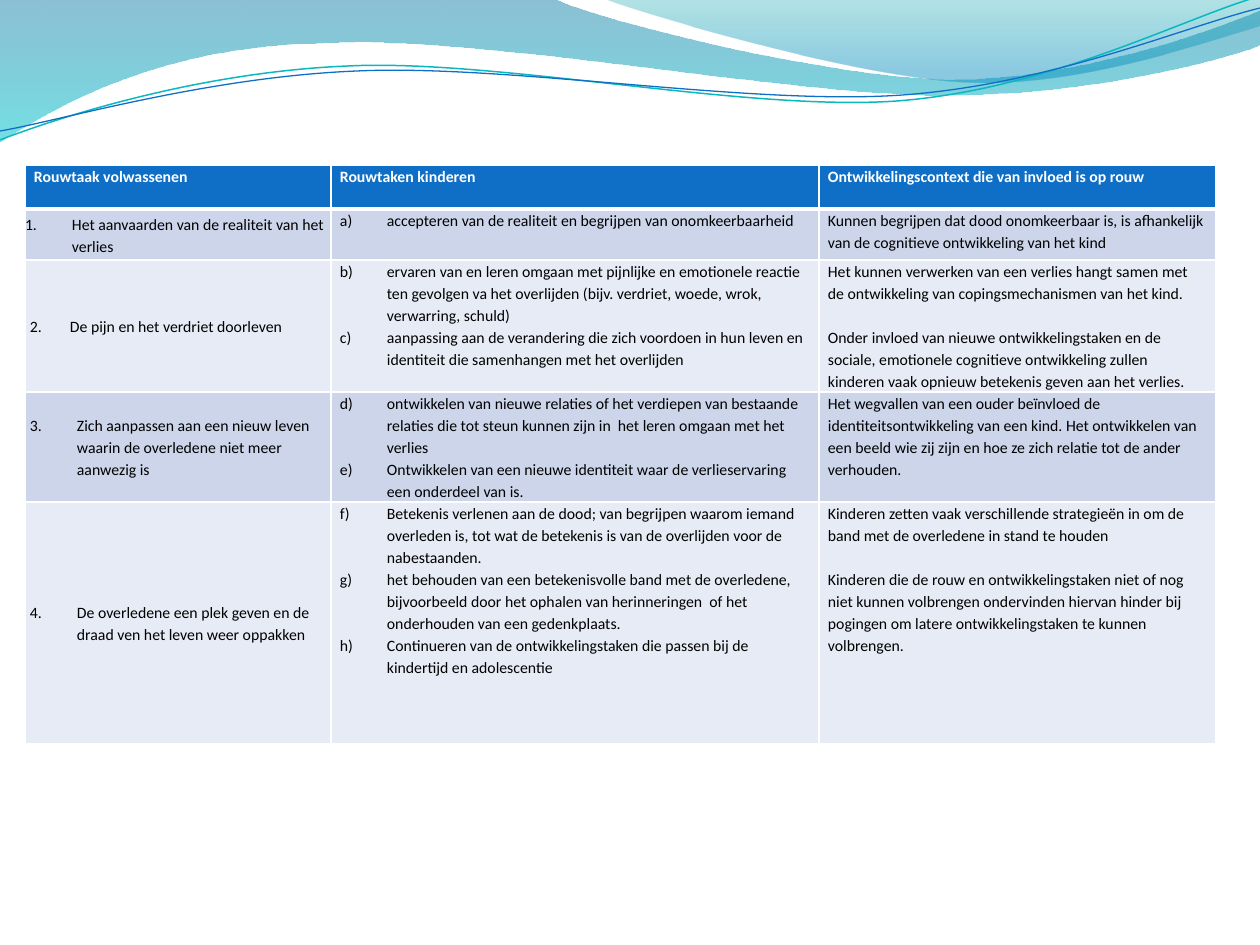
from dataclasses import dataclass
from math import cos, radians, sin

from lxml import etree
from pptx import Presentation
from pptx.dml.color import RGBColor
from pptx.enum.text import MSO_ANCHOR
from pptx.oxml.ns import qn
from pptx.util import Pt

SCALE = 914400 / 126
MIDDLE, TOP = MSO_ANCHOR.MIDDLE, MSO_ANCHOR.TOP


@dataclass(frozen=True)
class Theme:
    font: str = "Calibri"
    size: float = 9
    spacing: float = 1.15
    line_gap: float = 12.6
    white: str = "FFFFFF"
    black: str = "000000"
    blue: str = "0F6FC6"
    teal: str = "0AB8BF"
    bands: tuple = ("CCD5EA", "E7EBF5")
    wide_wave: tuple = ((0, "0074A1", 45), (1, "00C6CF", 55))
    right_wave: tuple = ((0, "00A1A9", 30), (0.8, "008BBF", 45))


T = Theme()

HEADERS = ["Rouwtaak volwassenen", "Rouwtaken kinderen",
           "Ontwikkelingscontext die van invloed is op rouw"]
TASKS = [
    ("Het aanvaarden van de realiteit van het verlies",
     ["accepteren van de realiteit en begrijpen van onomkeerbaarheid"],
     ["Kunnen begrijpen dat dood onomkeerbaar is, is afhankelijk van de cognitieve "
      "ontwikkeling van het kind"]),
    ("De pijn en het verdriet doorleven",
     ["ervaren van en leren omgaan met pijnlijke en emotionele reactie ten gevolgen va "
      "het overlijden (bijv. verdriet, woede, wrok, verwarring, schuld)",
      "aanpassing aan de verandering die zich voordoen in hun leven en identiteit die "
      "samenhangen met het overlijden"],
     ["Het kunnen verwerken van een verlies hangt samen met de ontwikkeling van "
      "copingsmechanismen van het kind.",
      "Onder invloed van nieuwe ontwikkelingstaken en de sociale, emotionele cognitieve "
      "ontwikkeling zullen kinderen vaak opnieuw betekenis geven aan het verlies."]),
    ("Zich aanpassen aan een nieuw leven waarin de overledene niet meer aanwezig is",
     ["ontwikkelen van nieuwe relaties of het verdiepen van bestaande relaties die tot "
      "steun kunnen zijn in  het leren omgaan met het verlies",
      "Ontwikkelen van een nieuwe identiteit waar de verlieservaring een onderdeel van is."],
     ["Het wegvallen van een ouder beïnvloed de identiteitsontwikkeling van een kind. Het "
      "ontwikkelen van een beeld wie zij zijn en hoe ze zich relatie tot de ander verhouden."]),
    ("De overledene een plek geven en de draad ven het leven weer oppakken",
     ["Betekenis verlenen aan de dood; van begrijpen waarom iemand overleden is, tot wat "
      "de betekenis is van de overlijden voor de nabestaanden.",
      "het behouden van een betekenisvolle band met de overledene, bijvoorbeeld door het "
      "ophalen van herinneringen  of het onderhouden van een gedenkplaats.",
      "Continueren van de ontwikkelingstaken die passen bij de kindertijd en adolescentie"],
     ["Kinderen zetten vaak verschillende strategieën in om de band met de overledene in "
      "stand te houden",
      "Kinderen die de rouw en ontwikkelingstaken niet of nog niet kunnen volbrengen "
      "ondervinden hiervan hinder bij pogingen om latere ontwikkelingstaken te kunnen "
      "volbrengen."]),
]

WIDE_WAVE = [(0, 0), (554, -1), (600, 21, 837, 79, 955, 79),
             (1074, 79, 1207, 33, 1260, 11), (1261, 45),
             (1239, 55, 1096, 96, 940, 95), (784, 95, 481, 35, 324, 43),
             (163, 45, 58, 105, -1, 142)]
RIGHT_WAVE = [(604, -1), (641, 14, 859, 78, 969, 82),
              (1079, 87, 1211, 40, 1260, 26), (1260, 0)]
TEAL_LINE = [(0, 140), (60, 117, 199, 72, 349, 66),
             (498, 59, 747, 112, 898, 101), (1050, 89, 1182, 19, 1257, -3)]
BLUE_LINE = [(0, 131), (59, 121, 207, 77, 357, 71),
             (508, 64, 752, 106, 903, 95), (1053, 84, 1186, 26, 1260, 8)]
SWOOSH_TILT = -2.7
SWOOSH_CENTER = (629, 73)


def px(n):
    return round(n * SCALE)


def rgb(code):
    return RGBColor.from_string(code)


def level(x, y):
    a = radians(-SWOOSH_TILT)
    cx, cy = SWOOSH_CENTER
    dx, dy = x - cx, y - cy
    return cx + dx * cos(a) - dy * sin(a), cy + dx * sin(a) + dy * cos(a)


def add_outline(s, segments, close, tilt=0):
    points = [seg[i:i + 2] for seg in segments for i in range(0, len(seg), 2)]
    if tilt:
        points = [level(x, y) for x, y in points]
    start, *rest = [(px(x), px(y)) for x, y in points]
    builder = s.shapes.build_freeform(*start)
    builder.add_line_segments(rest, close=close)
    sp = builder.convert_to_shape()
    sp.shadow.inherit = False
    sp.rotation = tilt
    lines = iter(list(sp.element.iter(qn("a:lnTo"))))
    for seg in segments[1:]:
        first = next(lines)
        if len(seg) == 6:
            first.tag = qn("a:cubicBezTo")
            for _ in range(2):
                control = next(lines)
                first.append(control[0])
                control.getparent().remove(control)
    return sp


def add_wave(s, segments, stops):
    sp = add_outline(s, segments, True)
    sp.line.fill.background()
    sp.fill.gradient()
    sp.fill.gradient_angle = 270
    for stop, (position, color, opacity) in zip(sp.fill.gradient_stops, stops):
        stop.position = position
        stop.color.rgb = rgb(color)
    colors = list(sp.element.spPr.iter(qn("a:srgbClr")))
    for node, (position, color, opacity) in zip(colors, stops):
        etree.SubElement(node, qn("a:alpha"), val=str(opacity * 1000))


def add_swoosh(s, segments, color, width):
    sp = add_outline(s, segments, False, tilt=SWOOSH_TILT)
    sp.fill.background()
    sp.line.color.rgb = rgb(color)
    sp.line.width = Pt(width)


def write(tf, texts, color=T.black, bold=False, hang=0, letter=0, gap=0, after=0):
    for i, text in enumerate(texts):
        p = tf.paragraphs[0] if i == 0 else tf.add_paragraph()
        p.line_spacing = T.spacing
        p.space_before = Pt(gap if i else 0)
        p.space_after = Pt(after)
        pPr = p._p.get_or_add_pPr()
        pPr.set("marL", str(px(hang)))
        pPr.set("indent", str(-px(hang)))
        if letter:
            etree.SubElement(pPr, qn("a:buFont"), typeface=T.font)
            etree.SubElement(pPr, qn("a:buAutoNum"), type="alphaLcParenR",
                             startAt=str(letter))
        r = p.add_run()
        r.text = text
        r.font.name = T.font
        r.font.size = Pt(T.size)
        r.font.bold = bold
        r.font.color.rgb = rgb(color)


def style_cell(cell, fill, inset=9, anchor=TOP, bottom=1):
    cell.margin_left = cell.margin_right = px(inset)
    cell.margin_top = cell.margin_bottom = 0
    cell.vertical_anchor = anchor
    tcPr = cell._tc.get_or_add_tcPr()
    for side, width in (("L", 1), ("R", 1), ("T", 1), ("B", bottom)):
        ln = etree.SubElement(tcPr, qn("a:ln" + side), w=str(Pt(width)))
        solid = etree.SubElement(ln, qn("a:solidFill"))
        etree.SubElement(solid, qn("a:srgbClr"), val=T.white)
    cell.fill.solid()
    cell.fill.fore_color.rgb = rgb(fill)


def add_task_table(s, left, top, widths, heights):
    frame = s.shapes.add_table(len(heights), len(widths), px(left), px(top),
                               px(sum(widths)), px(sum(heights)))
    table = frame.table
    for column, width in zip(table.columns, widths):
        column.width = px(width)
    for row, height in zip(table.rows, heights):
        row.height = px(height)
    for i, header in enumerate(HEADERS):
        cell = table.cell(0, i)
        style_cell(cell, T.blue, bottom=3)
        write(cell.text_frame, [header], color=T.white, bold=True, after=0 if i else 10)
    letter = 1
    for n, (task, child_tasks, context) in enumerate(TASKS, 1):
        adult, child, development = table.rows[n].cells
        band = T.bands[(n - 1) % 2]
        style_cell(adult, band, inset=0 if n == 1 else 5, anchor=MIDDLE)
        style_cell(child, band)
        style_cell(development, band)
        write(adult.text_frame, [f"{n}.\t{task}"], hang=40 if n == 2 else 47)
        write(child.text_frame, child_tasks, hang=47, letter=letter)
        write(development.text_frame, context, gap=T.line_gap)
        letter += len(child_tasks)


def main():
    prs = Presentation()
    prs.slide_width, prs.slide_height = px(1260), px(945)
    s = prs.slides.add_slide(prs.slide_layouts[6])
    add_wave(s, WIDE_WAVE, T.wide_wave)
    add_wave(s, RIGHT_WAVE, T.right_wave)
    add_swoosh(s, TEAL_LINE, T.teal, 0.85)
    add_swoosh(s, BLUE_LINE, T.blue, 0.75)
    add_task_table(s, 25, 165, [306, 488, 397], [44, 51, 132, 110, 242])
    prs.save("out.pptx")


if __name__ == "__main__":
    main()
